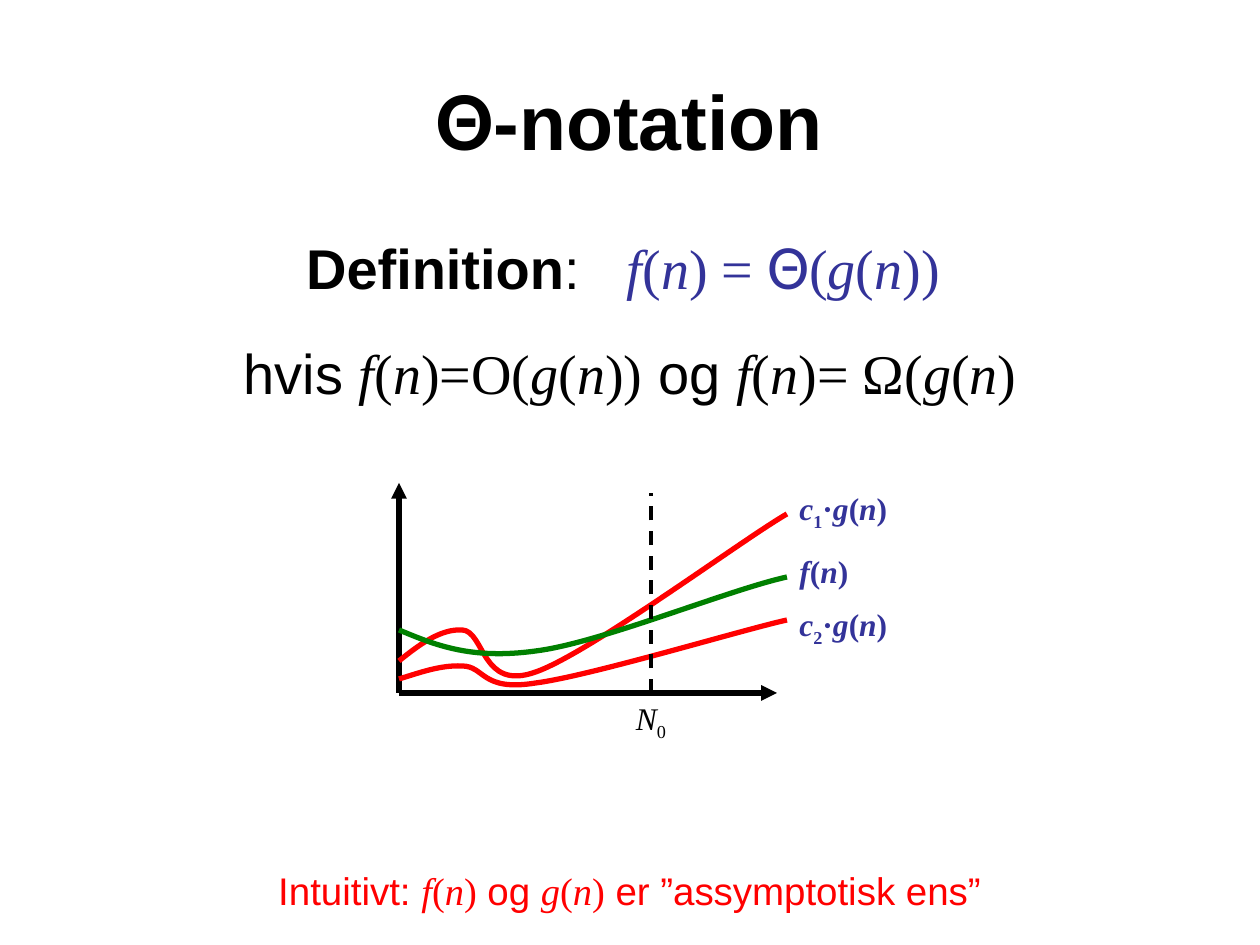
"""Build a slide that defines theta notation and plots its two bounds."""
from dataclasses import dataclass
from itertools import groupby

from lxml.etree import SubElement
from pptx import Presentation
from pptx.dml.color import RGBColor
from pptx.enum.dml import MSO_LINE
from pptx.enum.shapes import MSO_CONNECTOR
from pptx.enum.text import MSO_ANCHOR, PP_ALIGN
from pptx.oxml.ns import qn
from pptx.util import Pt

PX = 7257


@dataclass(frozen=True)
class Theme:
    sans: str = "Arial"
    math: str = "Times New Roman"
    greek: str = "Calibri"
    black: str = "000000"
    blue: str = "333399"
    red: str = "FF0000"
    green: str = "008000"
    title: int = 44
    title_greek: int = 48
    body: int = 32
    body_greek: int = 36
    note: int = 22
    label: int = 18
    stroke: int = 3
    dash: int = 2


THEME = Theme()
VARIABLES = "cfgnN"
CENTER, LEFT = PP_ALIGN.CENTER, PP_ALIGN.LEFT


def plain(text, size, color=THEME.black, font=THEME.sans, **extra):
    return [dict(text=text, size=size, color=color, font=font, **extra)]


def formula(text, size, color=THEME.black, bold=False):
    """Split a formula into runs: variables italic, digits as subscripts."""
    groups = groupby(text, lambda sign: (sign in VARIABLES, sign.isdigit()))
    return [dict(text="".join(signs), size=size, color=color, font=THEME.math,
                 bold=bold, italic=italic, subscript=subscript)
            for (italic, subscript), signs in groups]


TITLE = (plain("Θ", THEME.title_greek, font=THEME.greek, bold=True)
         + plain("-notation", THEME.title, bold=True))
DEFINITION = (plain("Definition", THEME.body, bold=True)
              + plain(":", THEME.body)
              + plain(" ", THEME.body, spacing=1780)
              + formula("f(n) = ", THEME.body, THEME.blue)
              + plain("Θ", THEME.body_greek, THEME.blue, THEME.greek)
              + formula("(g(n)) ", THEME.body, THEME.blue))
CONDITION = (plain("hvis ", THEME.body)
             + formula("f(n)=O(g(n))", THEME.body)
             + plain(" og ", THEME.body)
             + formula("f(n)= Ω(g(n)", THEME.body))
INTUITION = (plain("Intuitivt: ", THEME.note, THEME.red)
             + formula("f(n)", THEME.note, THEME.red)
             + plain(" og ", THEME.note, THEME.red)
             + formula("g(n)", THEME.note, THEME.red)
             + plain(" er ”assymptotisk ens”", THEME.note, THEME.red))

ORIGIN = (399, 693)
THRESHOLD = 651
AXIS_ENDS = [(399, 483), (777, 693)]
CURVES = [
    (THEME.red, [(399, 661), (419, 645), (440, 629), (462, 630), (485, 631),
                 (481, 692), (536, 672), (590, 653), (742, 540), (787, 514)]),
    (THEME.green, [(399, 630), (435, 645), (471, 660), (536, 651),
                   (600, 643), (728, 590), (787, 577)]),
    (THEME.red, [(399, 679), (419, 673), (440, 665), (462, 666), (485, 666),
                 (481, 692), (536, 683), (590, 676), (742, 630), (787, 620)]),
]
CURVE_LABELS = [("c1·g(n)", 483), ("f(n)", 546), ("c2·g(n)", 599)]


def rgb(color):
    return RGBColor.from_string(color)


def add_text(slide, box, paragraphs, align=CENTER, anchor=MSO_ANCHOR.TOP):
    """Add a text box from (space before, runs) pairs."""
    frame = slide.shapes.add_textbox(*(value * PX for value in box)).text_frame
    frame.word_wrap = True
    frame.vertical_anchor = anchor
    for index, (space, runs) in enumerate(paragraphs):
        paragraph = frame.add_paragraph() if index else frame.paragraphs[0]
        paragraph.alignment = align
        paragraph.space_before = Pt(space)
        for style in runs:
            run = paragraph.add_run()
            run.text = style["text"]
            run.font.name = style["font"]
            run.font.size = Pt(style["size"])
            run.font.bold = style.get("bold", False)
            run.font.italic = style.get("italic", False)
            run.font.color.rgb = rgb(style["color"])
            properties = run._r.get_or_add_rPr()
            if style.get("subscript"):
                properties.set("baseline", "-25000")
            if "spacing" in style:
                properties.set("spc", str(style["spacing"]))


def add_line(slide, start, end, width, dashed=False):
    """Add a dashed line, or a solid one with an arrowhead."""
    points = (value * PX for value in (*start, *end))
    connector = slide.shapes.add_connector(MSO_CONNECTOR.STRAIGHT, *points)
    connector.line.color.rgb = rgb(THEME.black)
    connector.line.width = Pt(width)
    if dashed:
        connector.line.dash_style = MSO_LINE.DASH
    else:
        SubElement(connector.line._get_or_add_ln(), qn("a:tailEnd"), type="triangle")
    SubElement(connector._element.spPr, qn("a:effectLst"))


def add_curve(slide, color, controls):
    """Add an open outline whose points are cubic Bezier controls."""
    start, *rest = controls
    builder = slide.shapes.build_freeform(*start, scale=PX)
    builder.add_line_segments(rest, close=False)
    curve = builder.convert_to_shape()
    segments = list(curve._element.iter(qn("a:lnTo")))
    outline = segments[0].getparent()
    for first in range(0, len(segments), 3):
        bezier = SubElement(outline, qn("a:cubicBezTo"))
        for segment in segments[first:first + 3]:
            bezier.append(segment[0])
            outline.remove(segment)
    curve.shadow.inherit = False
    curve.fill.background()
    curve.line.color.rgb = rgb(color)
    curve.line.width = Pt(THEME.stroke)


def main():
    presentation = Presentation()
    presentation.slide_width, presentation.slide_height = 1260 * PX, 945 * PX
    slide = presentation.slides.add_slide(presentation.slide_layouts[6])
    add_text(slide, (63, 38, 1134, 158), [(0, TITLE)], anchor=MSO_ANCHOR.MIDDLE)
    add_text(slide, (63, 220, 1134, 462), [(2, DEFINITION), (21, CONDITION)])
    add_text(slide, (15, 861, 1229, 59), [(2, INTUITION)])
    for end in AXIS_ENDS:
        add_line(slide, ORIGIN, end, THEME.stroke)
    for color, controls in CURVES:
        add_curve(slide, color, controls)
    add_line(slide, (THRESHOLD, ORIGIN[1]), (THRESHOLD, 493), THEME.dash, dashed=True)
    add_text(slide, (THRESHOLD - 42, ORIGIN[1], 84, 50),
             [(2, formula("N0", THEME.label))])
    for text, top in CURVE_LABELS:
        add_text(slide, (787, top, 126, 50),
                 [(2, formula(text, THEME.label, THEME.blue, bold=True))], LEFT)
    presentation.save("out.pptx")


if __name__ == "__main__":
    main()
